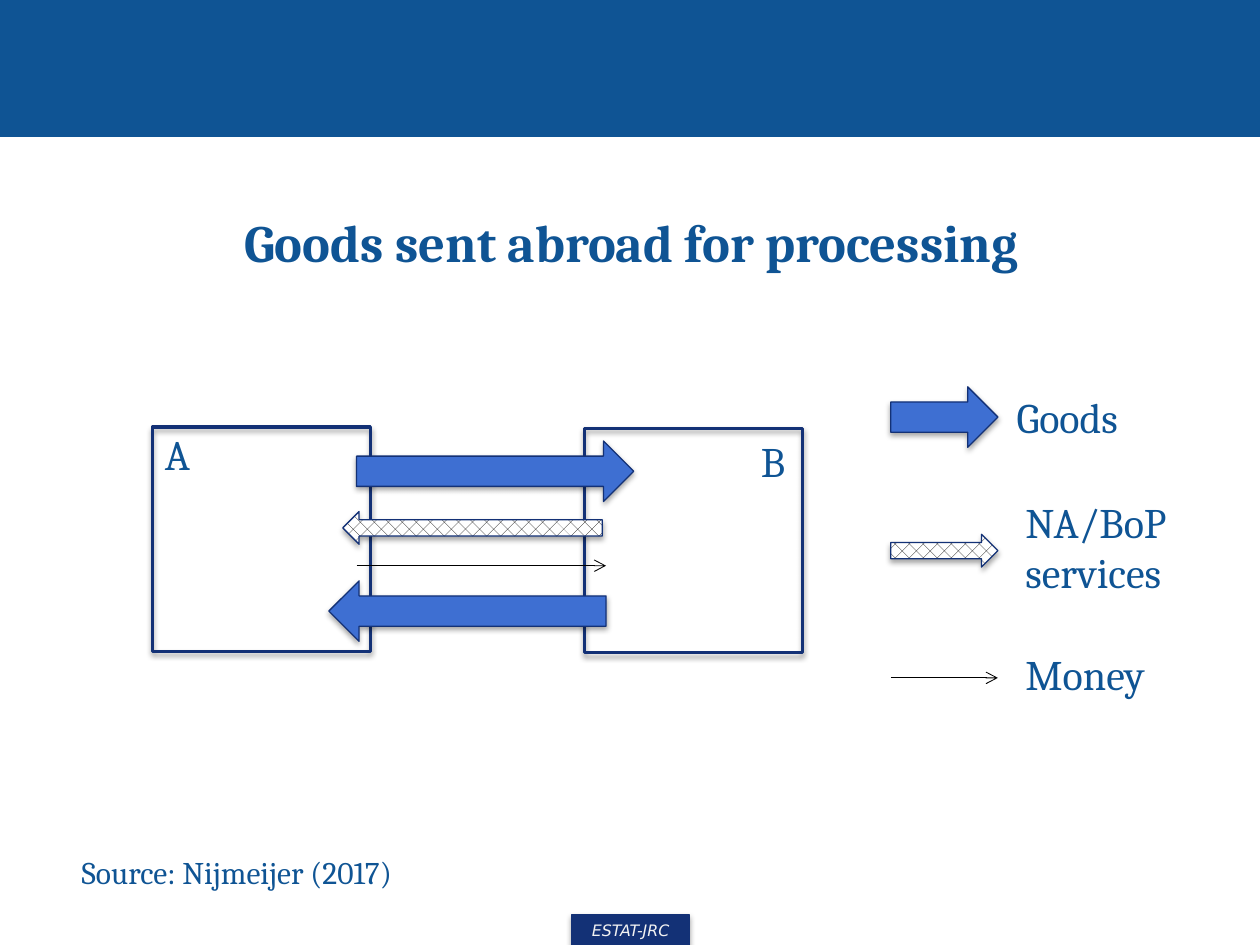
from lxml import etree
from pptx import Presentation
from pptx.dml.color import RGBColor
from pptx.enum import dml, shapes, text
from pptx.oxml import ns
from pptx.util import Inches, Pt

BLUE = RGBColor(0x0F, 0x54, 0x94)
NAVY = RGBColor(0x13, 0x31, 0x76)
GOODS_BLUE = RGBColor(0x3E, 0x6F, 0xD2)
PALE = RGBColor(0xF2, 0xF2, 0xF2)
BLACK = RGBColor(0, 0, 0)
WHITE = RGBColor(0xFF, 0xFF, 0xFF)

RIGHT, LEFT = 270, 90  # rotations of a down arrow
GOODS_THICKNESS, SERVICES_THICKNESS = 0.48, 0.26


def add_child(parent, tag, **attributes):
    return etree.SubElement(parent, ns.qn(tag), attributes)


def add_shadow(shape):
    """Soft grey shadow just below the shape."""
    effects = shape._element.spPr.find(ns.qn("a:effectLst"))
    shadow = add_child(effects, "a:outerShdw", blurRad="40000", dist="23000",
                       dir="5400000", rotWithShape="0")
    color = add_child(shadow, "a:srgbClr", val="000000")
    add_child(color, "a:alpha", val="35000")


def add_block(slide, kind, left, top, width, height, fill=None,
              line=NAVY, weight=0.75, shadow=True):
    block = slide.shapes.add_shape(kind, Inches(left), Inches(top),
                                   Inches(width), Inches(height))
    if fill is None:
        block.fill.background()
    else:
        block.fill.solid()
        block.fill.fore_color.rgb = fill
    block.line.color.rgb = line
    block.line.width = Pt(weight)
    block.shadow.inherit = False
    if shadow:
        add_shadow(block)
    return block


def add_flow(slide, center_x, center_y, length, thickness, direction):
    """Block arrow: blue for goods, hatched for services."""
    arrow = add_block(slide, shapes.MSO_SHAPE.DOWN_ARROW,
                      center_x - thickness / 2, center_y - length / 2,
                      thickness, length, GOODS_BLUE)
    arrow.rotation = direction
    if thickness == SERVICES_THICKNESS:
        arrow.fill.patterned()
        arrow.fill.pattern = dml.MSO_PATTERN.PERCENT_25
        arrow.fill.fore_color.rgb = BLACK
        arrow.fill.back_color.rgb = WHITE


def add_money_flow(slide, start, end, y):
    flow = slide.shapes.add_connector(shapes.MSO_CONNECTOR.STRAIGHT, Inches(start),
                                      Inches(y), Inches(end), Inches(y))
    flow.line.color.rgb = BLACK
    flow.line.width = Pt(0.5)
    add_child(flow.line._get_or_add_ln(), "a:tailEnd", type="arrow")
    add_child(flow._element.spPr, "a:effectLst")


def write(frame, wording, size=24, font="Cambria", color=BLUE, bold=False,
          italic=False, align=text.PP_ALIGN.LEFT, anchor=text.MSO_ANCHOR.TOP):
    frame.text = wording
    frame.vertical_anchor = anchor
    for paragraph in frame.paragraphs:
        paragraph.alignment = align
        paragraph.font.size = Pt(size)
        paragraph.font.name = font
        paragraph.font.bold = bold
        paragraph.font.italic = italic
        paragraph.font.color.rgb = color


def add_label(slide, wording, left, top, width, height, wrap=False, **style):
    label = slide.shapes.add_textbox(Inches(left), Inches(top),
                                     Inches(width), Inches(height))
    write(label.text_frame, wording, **style)
    label.text_frame.word_wrap = wrap
    if not wrap:
        label.text_frame.auto_size = text.MSO_AUTO_SIZE.SHAPE_TO_FIT_TEXT


def add_frame(slide):
    """Top band, footer tag, title and source."""
    centered = {"align": text.PP_ALIGN.CENTER, "anchor": text.MSO_ANCHOR.MIDDLE}
    rectangle = shapes.MSO_SHAPE.RECTANGLE
    add_block(slide, rectangle, 0, 0, 10, 1.08, BLUE, BLUE, shadow=False)
    tag = add_block(slide, rectangle, 4.54, 7.26, 0.93, 0.24, NAVY)
    write(tag.text_frame, "ESTAT-JRC", size=9, font="DejaVu Sans", color=PALE,
          italic=True, **centered)
    tag.text_frame.word_wrap = False
    add_label(slide, "Goods sent abroad for processing", 0.51, 1.41, 9, 1.02,
              wrap=True, size=30, bold=True, **centered)
    add_label(slide, "Source: Nijmeijer (2017)", 0.55, 6.72, 2.95, 0.4, size=18)


def add_exchange(slide):
    """Countries A and B and the flows between them."""
    for name, left, top, name_left, name_top in (("A", 1.21, 3.39, 1.21, 3.35),
                                                 ("B", 4.64, 3.4, 5.94, 3.41)):
        add_block(slide, shapes.MSO_SHAPE.RECTANGLE, left, top, 1.73, 1.78, weight=2)
        add_label(slide, name, name_left, name_top, 0.43, 0.5)
    add_money_flow(slide, 2.83, 4.81, 4.49)
    add_flow(slide, 3.93, 3.74, 2.2, GOODS_THICKNESS, RIGHT)
    add_flow(slide, 3.71, 4.85, 2.2, GOODS_THICKNESS, LEFT)
    add_flow(slide, 3.75, 4.19, 2.06, SERVICES_THICKNESS, LEFT)


def add_legend(slide):
    start, length = 7.07, 0.85
    center = start + length / 2
    add_flow(slide, center, 3.31, length, GOODS_THICKNESS, RIGHT)
    add_flow(slide, center, 4.37, length, SERVICES_THICKNESS, RIGHT)
    add_money_flow(slide, start, start + length, 5.38)
    add_label(slide, "Goods", 7.97, 3.06, 1.15, 0.5)
    add_label(slide, "NA/BoP\nservices", 8.04, 3.89, 1.45, 0.91)
    add_label(slide, "Money", 8.04, 5.1, 1.22, 0.5)


def main():
    deck = Presentation()
    deck.slide_width, deck.slide_height = Inches(10), Inches(7.5)
    slide = deck.slides.add_slide(deck.slide_layouts[6])
    add_frame(slide)
    add_exchange(slide)
    add_legend(slide)
    deck.save("out.pptx")


if __name__ == "__main__":
    main()
